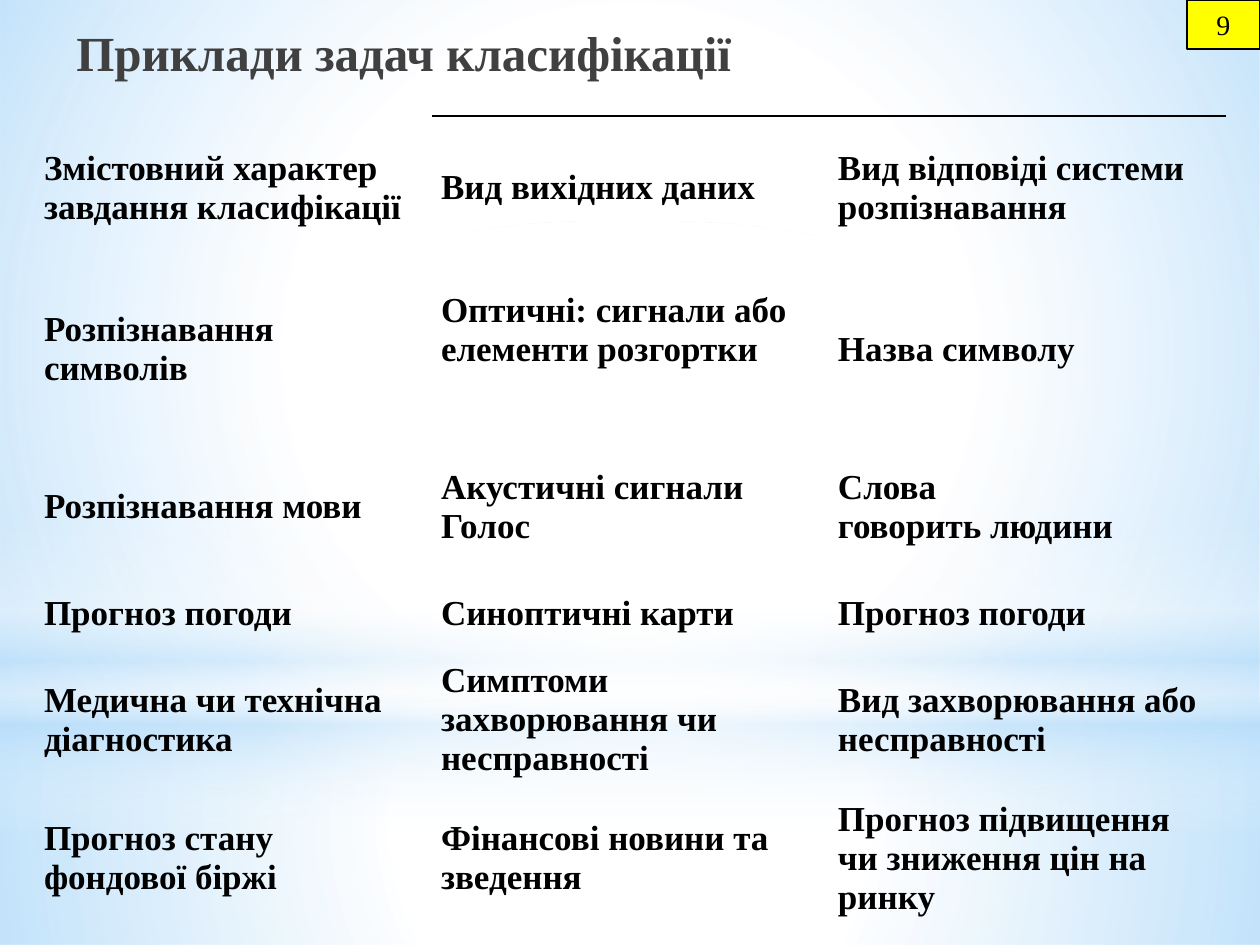
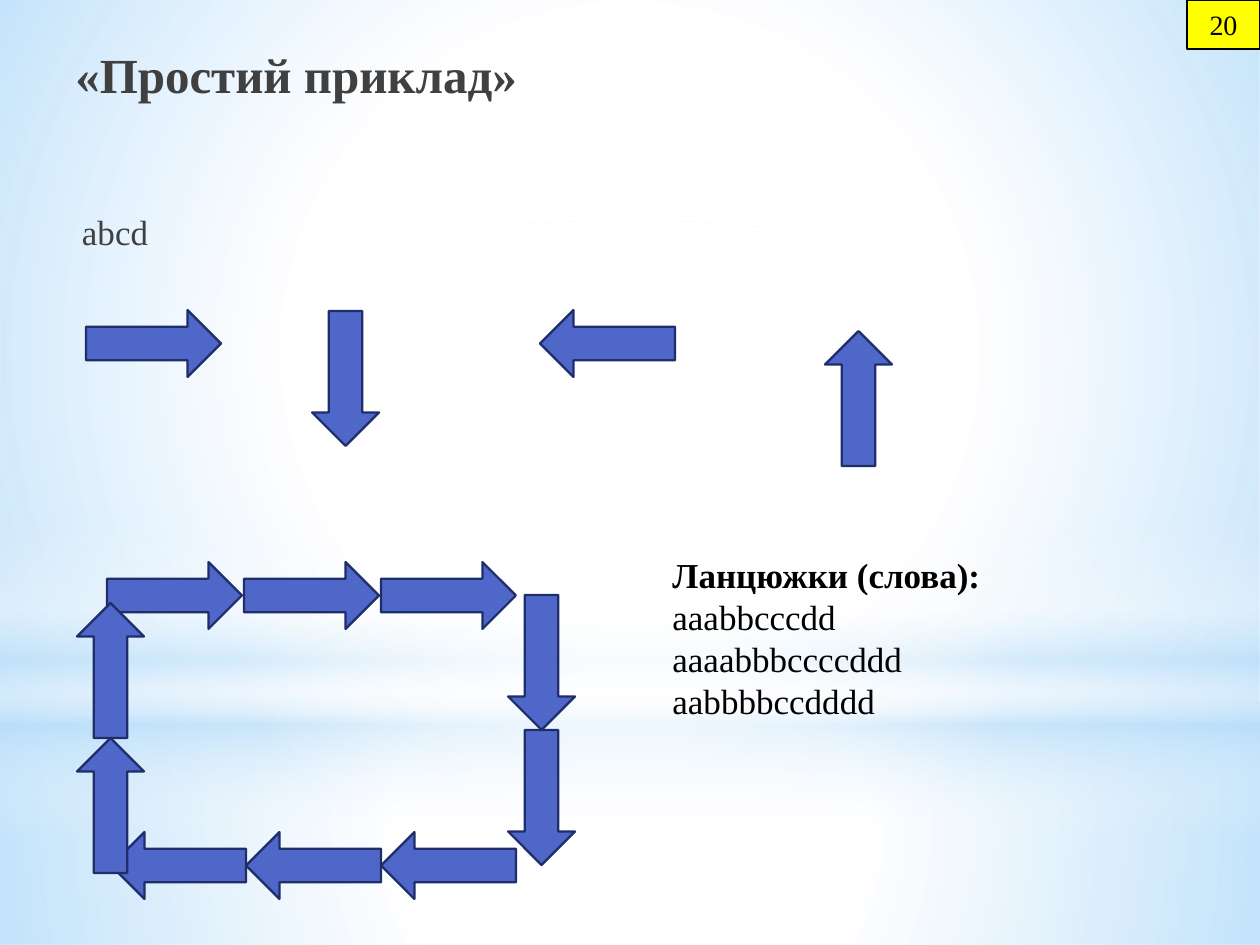
from dataclasses import dataclass

from lxml import etree
from pptx import Presentation
from pptx.dml.color import RGBColor
from pptx.enum.shapes import MSO_SHAPE
from pptx.enum.text import MSO_ANCHOR, PP_ALIGN
from pptx.oxml import parse_xml
from pptx.oxml.ns import nsdecls, qn
from pptx.util import Emu, Pt

SCALE = 914400 / 126
WIDE, HIGH = 1260, 945
PLAIN = "{2D5ABB26-0587-4C30-8999-92F81FD0307C}"


@dataclass(frozen=True)
class Theme:
    font: str = "Times New Roman"
    white: str = "FFFFFF"
    sky: str = "B4DCFA"
    ink: str = "000000"
    gray: str = "404040"
    badge: str = "FFFF00"
    arrow: str = "4E67C8"
    edge: str = "1F2E69"
    title: int = 28
    text: int = 20
    number: int = 16


THEME = Theme()

HAZE = [  # box, shape, stops (place, colour, opacity), angle or None for radial
    ((0, 703, WIDE, 242), MSO_SHAPE.RECTANGLE,
     [(0, THEME.white, 91), (37, THEME.white, 76), (100, THEME.sky, 79)], None),
    ((0, 0, WIDE, 703), MSO_SHAPE.RECTANGLE,
     [(0, THEME.white, 89), (48, THEME.white, 62), (100, THEME.sky, 79)], None),
    ((0, 519, WIDE, 315), MSO_SHAPE.RECTANGLE,
     [(0, THEME.white, 0), (29, THEME.white, 30), (45, THEME.sky, 40),
      (55, THEME.white, 26), (65, THEME.sky, 60), (100, THEME.white, 0)], 90),
    ((0, 221, WIDE, 703), MSO_SHAPE.OVAL,
     [(0, THEME.white, 100), (56, THEME.white, 0)], None),
]

TASKS = [
    ("Змістовний характер завдання класифікації", "Вид вихідних даних",
     "Вид відповіді системи розпізнавання"),
    ("Розпізнавання символів", "Оптичні: сигнали або елементи розгортки",
     "Назва символу"),
    ("Розпізнавання мови", "Акустичні сигнали\nГолос",
     "Слова\nговорить людини"),
    ("Прогноз погоди", "Синоптичні карти", "Прогноз погоди"),
    ("Медична чи технічна\nдіагностика",
     "Симптоми захворювання чи несправності",
     "Вид захворювання або несправності"),
    ("Прогноз стану фондової біржі", "Фінансові новини та зведення",
     "Прогноз підвищення чи зниження цін на ринку"),
]
ROWS = (144, 179, 136, 77, 136, 141)

RIGHT, DOWN = MSO_SHAPE.RIGHT_ARROW, MSO_SHAPE.DOWN_ARROW
LEFT, UP = MSO_SHAPE.LEFT_ARROW, MSO_SHAPE.UP_ARROW
LONG, SHORT = 135, 67
KEYS = [(DOWN, 312, 311), (RIGHT, 86, 310), (LEFT, 540, 310), (UP, 825, 331)]
CHAINS = [  # kind, first arrow, step, count
    (RIGHT, (30, 0), (137, 0), 3),
    (DOWN, (431, 168), (0, -LONG), 2),
    (LEFT, (34, 270), (LONG, 0), 3),
    (UP, (0, 176), (0, -LONG), 2),
]


def px(n):
    return Emu(round(n * SCALE))


def paint(shape, fill, line, width):
    shape.shadow.inherit = False
    shape.fill.solid()
    shape.fill.fore_color.rgb = RGBColor.from_string(fill)
    shape.line.color.rgb = RGBColor.from_string(line)
    shape.line.width = Pt(width)


def write(frame, *paras, size=THEME.text, color=THEME.ink, bold=False,
          align=PP_ALIGN.LEFT, before=0):
    """Fill a text frame; a line feed inside a paragraph is a line break."""
    frame.word_wrap = True
    for i, para in enumerate(paras):
        p = frame.add_paragraph() if i else frame.paragraphs[0]
        p.alignment = align
        p.space_before = Pt(before)
        for j, part in enumerate(para.split("\n")):
            if j:
                p.add_line_break()
            run = p.add_run()
            run.text = part
            run.font.name = THEME.font
            run.font.size = Pt(size)
            run.font.bold = bold
            run.font.color.rgb = RGBColor.from_string(color)


def label(slide, box, *paras, **style):
    frame = slide.shapes.add_textbox(*map(px, box)).text_frame
    write(frame, *paras, **style)
    return frame


def blend(shape, stops, angle):
    """Give a shape a gradient with opacity, linear or radial."""
    shape.fill.background()
    old = shape._element.spPr.find(qn("a:noFill"))
    grad = parse_xml(f'<a:gradFill {nsdecls("a")} rotWithShape="1"><a:gsLst/></a:gradFill>')
    for place, color, alpha in stops:
        stop = etree.SubElement(grad[0], qn("a:gs"), pos=str(place * 1000))
        tint = etree.SubElement(stop, qn("a:srgbClr"), val=color)
        etree.SubElement(tint, qn("a:alpha"), val=str(alpha * 1000))
    if angle is None:
        way = etree.SubElement(grad, qn("a:path"), attrib={"path": "circle"})
        half = dict.fromkeys("ltrb", "50000")
        etree.SubElement(way, qn("a:fillToRect"), attrib=half)
    else:
        etree.SubElement(grad, qn("a:lin"), ang=str(angle * 60000), scaled="0")
    old.getparent().replace(old, grad)


def base(deck, title, box, number):
    """Add a slide with the sky, its title and the page badge."""
    slide = deck.slides.add_slide(deck.slide_layouts[6])
    for area, kind, stops, angle in HAZE:
        shape = slide.shapes.add_shape(kind, *map(px, area))
        shape.shadow.inherit = False
        shape.line.fill.background()
        blend(shape, stops, angle)
    label(slide, box, title, size=THEME.title, color=THEME.gray, bold=True)
    badge = slide.shapes.add_shape(MSO_SHAPE.RECTANGLE, *map(px, (1187, 0, 73, 49)))
    paint(badge, THEME.badge, THEME.ink, 0.75)
    badge.text_frame.vertical_anchor = MSO_ANCHOR.MIDDLE
    write(badge.text_frame, str(number), size=THEME.number, align=PP_ALIGN.CENTER)
    return slide


def rule(cell):
    """Draw the top border of a cell."""
    cell._tc.get_or_add_tcPr().insert(0, parse_xml(
        f'<a:lnT {nsdecls("a")} w="9525"><a:solidFill>'
        f'<a:srgbClr val="{THEME.ink}"/></a:solidFill></a:lnT>'))


def grid(slide, box):
    table = slide.shapes.add_table(len(TASKS), 3, *map(px, box)).table
    table.first_row = table.horz_banding = False
    table._tbl.tblPr.find(qn("a:tableStyleId")).text = PLAIN
    for col in table.columns:
        col.width = px(box[2] / 3)
    for i, (high, task) in enumerate(zip(ROWS, TASKS)):
        table.rows[i].height = px(high)
        for j, words in enumerate(task):
            cell = table.cell(i, j)
            cell.fill.background()
            cell.vertical_anchor = MSO_ANCHOR.MIDDLE
            cell.margin_left = cell.margin_right = px(9)
            cell.margin_top = cell.margin_bottom = px(5)
            write(cell.text_frame, words, bold=True)
            if i == 0 and j > 0:
                rule(cell)
    table.cell(1, 1).margin_bottom = px(44)


def arrow(slide, kind, x, y):
    size = (LONG, SHORT) if kind in (LEFT, RIGHT) else (SHORT, LONG)
    shape = slide.shapes.add_shape(kind, *map(px, (x, y, *size)))
    paint(shape, THEME.arrow, THEME.edge, 1.25)


def ring(slide, left, top):
    """Lay the chains of arrows that close into a loop."""
    for kind, (x, y), (dx, dy), count in CHAINS:
        for i in range(count):
            arrow(slide, kind, left + x + i * dx, top + y + i * dy)


def tasks(deck):
    slide = base(deck, "Приклади задач класифікації", (64, 16, 1134, 89), 9)
    grid(slide, (35, 116, 1191, sum(ROWS)))


def sample(deck):
    slide = base(deck, "«Простий приклад»", (63, 38, 467, 77), 20)
    code = label(slide, (63, 204, 1134, 694), "abcd", color=THEME.gray, before=4)
    code.margin_left = px(19)
    for key in KEYS:
        arrow(slide, *key)
    ring(slide, 77, 562)
    words = label(slide, (660, 547, 486, 183), "Ланцюжки (слова):",
                  "aaabbcccdd", "aaaabbbccccddd", "aabbbbccdddd")
    words.paragraphs[0].runs[0].font.bold = True


def main():
    deck = Presentation()
    deck.slide_width, deck.slide_height = px(WIDE), px(HIGH)
    tasks(deck)
    sample(deck)
    deck.save("out.pptx")


if __name__ == "__main__":
    main()
